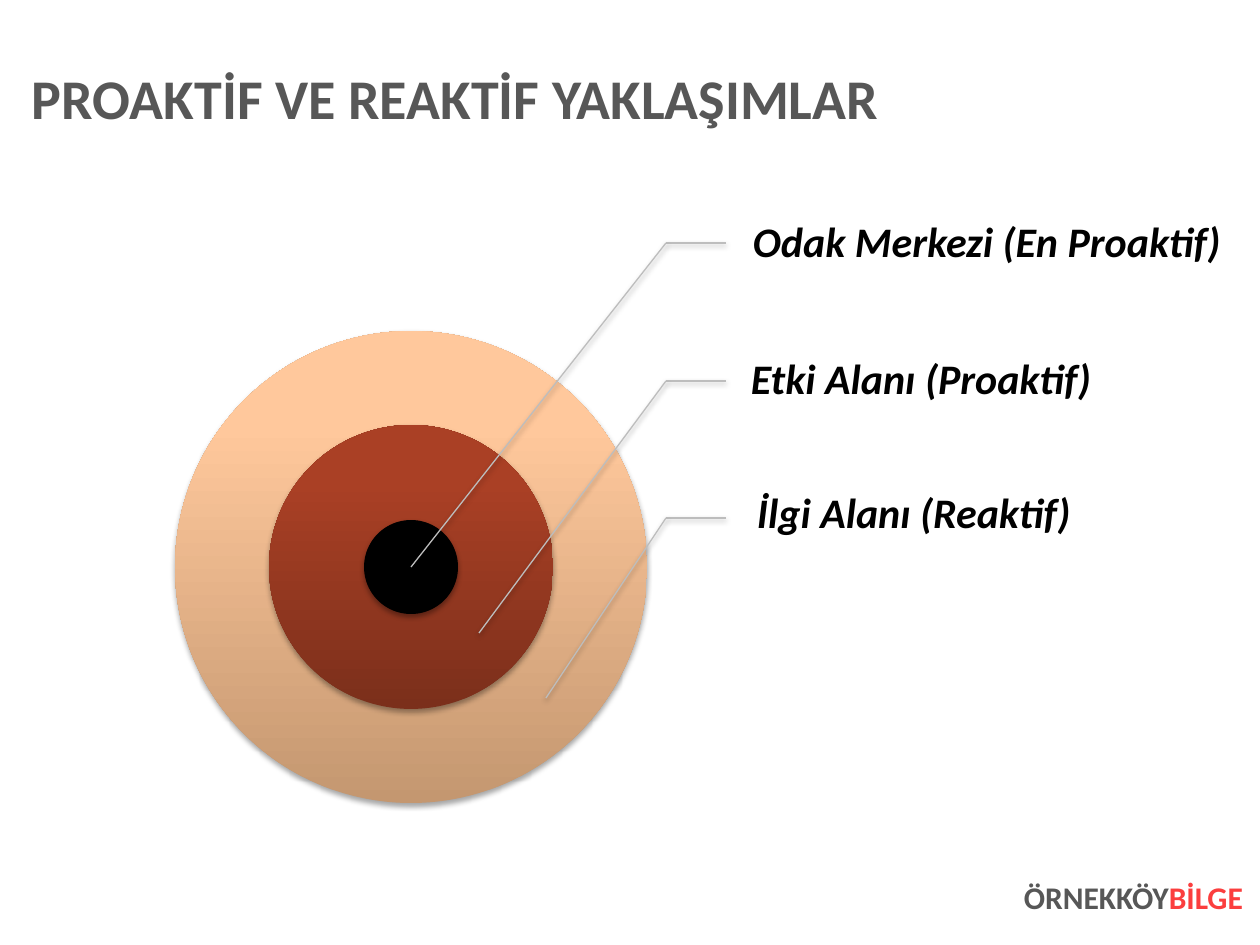
from dataclasses import dataclass

from lxml.etree import SubElement
from pptx import Presentation
from pptx.dml.color import RGBColor
from pptx.enum.shapes import MSO_CONNECTOR as Connector, MSO_SHAPE as Preset
from pptx.enum.text import MSO_ANCHOR as Anchor, PP_ALIGN as Align
from pptx.oxml.ns import qn
from pptx.util import Pt

EMU_PER_PX = 914400 / 126
CENTER_X, CENTER_Y = 411, 567
ELBOW_X, LABEL_LINE_END_X = 666, 726


@dataclass
class Ring:
    diameter: int
    bottom_color: str
    top_color: str


@dataclass
class Callout:
    text: str
    box: tuple[int, int, int, int]
    line_y: int
    target: tuple[int, int]


RINGS = [
    Ring(472, "C49770", "FFC89C"),
    Ring(284, "7B2F1B", "AA4025"),
    Ring(94, "000000", "000000"),
]
CALLOUTS = [
    Callout("Odak Merkezi (En Proaktif)", (729, 212, 504, 63), 243, (CENTER_X, CENTER_Y)),
    Callout("Etki Alanı (Proaktif)", (727, 353, 504, 55), 381, (479, 633)),
    Callout("İlgi Alanı (Reaktif)", (733, 485, 417, 60), 518, (546, 698)),
]


def px(length: float) -> int:
    return round(length * EMU_PER_PX)


def color(value: str) -> RGBColor:
    return RGBColor.from_string(value)


def set_attributes(target, values: dict) -> None:
    for name, value in values.items():
        setattr(target, name, value)


def add_shadow(shape, distance: float, opacity: int) -> None:
    properties = shape._element.spPr
    effects = properties.find(qn("a:effectLst"))
    if effects is None:
        effects = SubElement(properties, qn("a:effectLst"))
    shadow = SubElement(effects, qn("a:outerShdw"), blurRad=str(Pt(3.1)),
                        dist=str(Pt(distance)), dir="5400000", rotWithShape="0")
    black = SubElement(shadow, qn("a:srgbClr"), val="000000")
    SubElement(black, qn("a:alpha"), val=str(opacity * 1000))


def format_frame(frame, insets: tuple[int, int, int, int], anchor) -> None:
    left, top, right, bottom = map(px, insets)
    set_attributes(frame, {
        "word_wrap": True, "vertical_anchor": anchor,
        "margin_left": left, "margin_top": top,
        "margin_right": right, "margin_bottom": bottom,
    })


def add_run(paragraph, text: str, size: int, hex_color: str, italic: bool = False) -> None:
    run = paragraph.add_run()
    run.text = text
    set_attributes(run.font, {"name": "Calibri", "size": Pt(size), "bold": True, "italic": italic})
    run.font.color.rgb = color(hex_color)


def add_title(slide, text: str) -> None:
    title = slide.shapes.title
    set_attributes(title, {"left": px(32), "top": px(57), "width": px(1214), "height": px(89)})
    format_frame(title.text_frame, (0, 6, 0, 6), Anchor.MIDDLE)
    paragraph = title.text_frame.paragraphs[0]
    set_attributes(paragraph, {"alignment": Align.LEFT, "line_spacing": 0.9})
    add_run(paragraph, text, 32, "575757")


def add_ring(slide, ring: Ring) -> None:
    radius = ring.diameter / 2
    shape = slide.shapes.add_shape(Preset.OVAL, px(CENTER_X - radius), px(CENTER_Y - radius),
                                   px(ring.diameter), px(ring.diameter))
    shape.fill.gradient()
    shape.fill.gradient_angle = 90
    stops = zip(shape.fill.gradient_stops, (0, 0.8), (ring.bottom_color, ring.top_color))
    for stop, position, stop_color in stops:
        stop.position = position
        stop.color.rgb = color(stop_color)
    shape.line.fill.background()
    shape.shadow.inherit = False
    add_shadow(shape, 1.8, 35)


def add_leader(slide, start: tuple[int, int], end: tuple[int, int]) -> None:
    connector = slide.shapes.add_connector(Connector.STRAIGHT, *map(px, start + end))
    connector.line.color.rgb = color("BDBDBD")
    connector.line.width = Pt(0.75)
    add_shadow(connector, 1.6, 38)


def add_callout(slide, callout: Callout) -> None:
    label = slide.shapes.add_textbox(*map(px, callout.box))
    format_frame(label.text_frame, (24, 4, 4, 4), Anchor.MIDDLE)
    paragraph = label.text_frame.paragraphs[0]
    paragraph.line_spacing = 0.9
    add_run(paragraph, callout.text, 24, "000000", italic=True)
    elbow = (ELBOW_X, callout.line_y)
    for end in ((LABEL_LINE_END_X, callout.line_y), callout.target):
        add_leader(slide, elbow, end)


def add_signature(slide) -> None:
    signature = slide.shapes.add_textbox(*map(px, (953, 878, 290, 71)))
    format_frame(signature.text_frame, (0, 0, 0, 0), Anchor.TOP)
    paragraph = signature.text_frame.paragraphs[0]
    paragraph.alignment = Align.RIGHT
    for text, hex_color in (("ÖRNEKKÖY", "575757"), ("BİLGE", "FB3E3E")):
        add_run(paragraph, text, 18, hex_color)


def main() -> None:
    presentation = Presentation()
    set_attributes(presentation, {"slide_width": px(1260), "slide_height": px(945)})
    slide = presentation.slides.add_slide(presentation.slide_layouts[5])
    add_signature(slide)
    add_title(slide, "PROAKTİF VE REAKTİF YAKLAŞIMLAR")
    for ring in RINGS:
        add_ring(slide, ring)
    for callout in CALLOUTS:
        add_callout(slide, callout)
    presentation.save("out.pptx")


if __name__ == "__main__":
    main()
